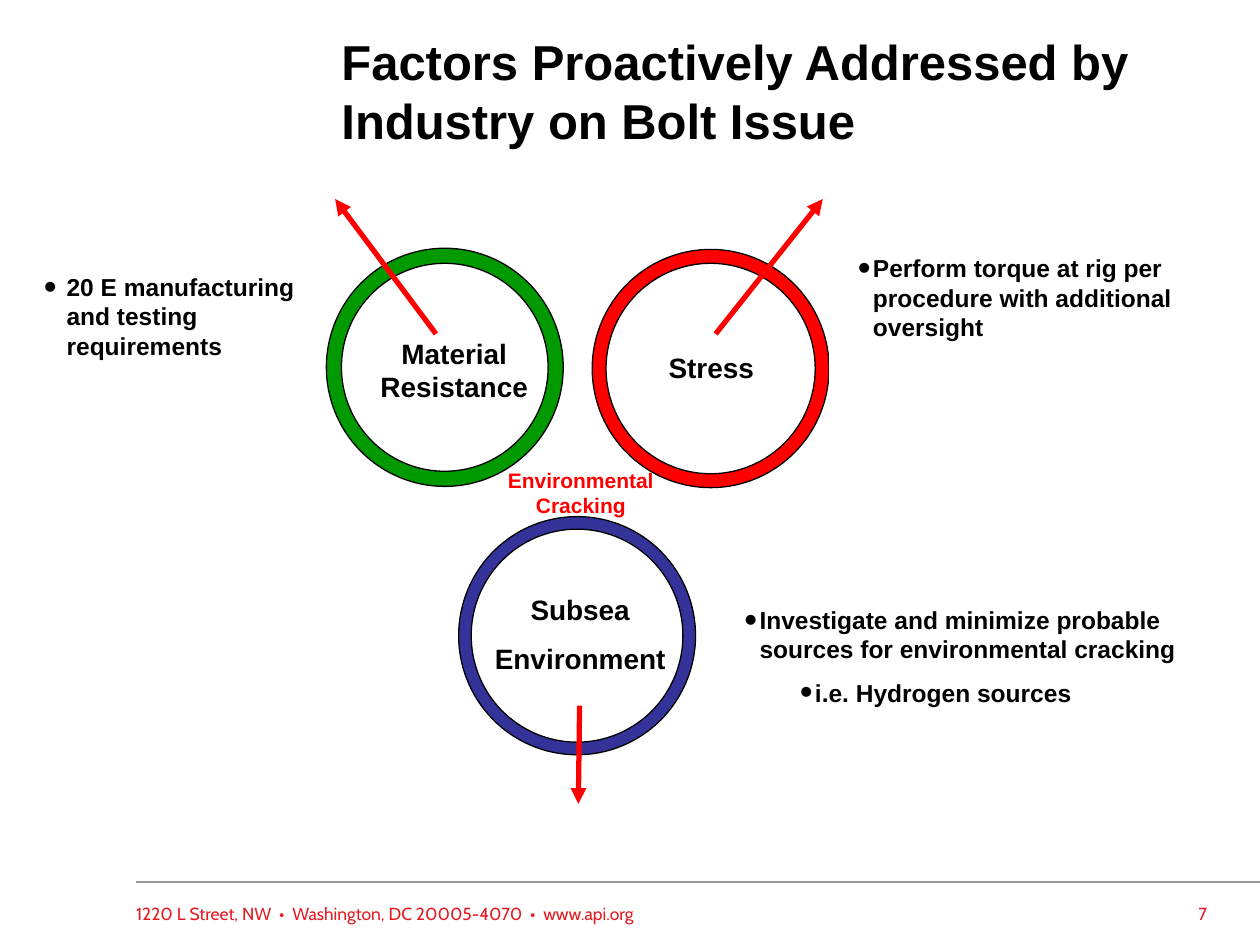
from lxml.etree import SubElement
from pptx import Presentation
from pptx.dml.color import RGBColor
from pptx.enum.shapes import MSO_CONNECTOR as Connector, MSO_SHAPE as Shape
from pptx.enum.text import MSO_ANCHOR as Anchor, MSO_AUTO_SIZE as AutoSize, PP_ALIGN as Align
from pptx.oxml.ns import qn
from pptx.util import Inches, Pt

COLORS = {
    "text": "000000",
    "paper": "FFFFFF",
    "red": "FF0000",
    "green": "009900",
    "blue": "333399",
    "rule": "969696",
    "footer": "E31B23",
}


def inches(*values):
    return [Inches(value) for value in values]


def write(paragraph, text, size=14, color="text", font="Arial", bold=True, align=Align.LEFT):
    paragraph.text = text
    paragraph.alignment = align
    paragraph.font.size = Pt(size)
    paragraph.font.name = font
    paragraph.font.bold = bold
    paragraph.font.color.rgb = RGBColor.from_string(COLORS[color])


def add_bullet(paragraph, margin, hanging):
    properties = paragraph._p.get_or_add_pPr()
    properties.set("marL", str(Inches(margin)))
    properties.set("indent", str(-Inches(hanging)))
    SubElement(properties, qn("a:buSzPct"), val="150000")
    SubElement(properties, qn("a:buFont"), typeface="Arial")
    SubElement(properties, qn("a:buChar"), char="•")


class SlideBuilder:
    def __init__(self, slide):
        self.slide = slide

    def title(self, text, box):
        shape = self.slide.shapes.title
        shape.left, shape.top, shape.width, shape.height = inches(*box)
        frame = shape.text_frame
        frame.auto_size = AutoSize.NONE
        frame.vertical_anchor = Anchor.TOP
        frame.margin_left = Inches(0.1)
        frame.margin_top = frame.margin_right = frame.margin_bottom = 0
        write(frame.paragraphs[0], text, size=28)

    def ring(self, left, top, color, thickness):
        width, height = 1.88, 1.89
        shape = self.slide.shapes.add_shape(Shape.DONUT, *inches(left, top, width, height))
        shape.adjustments[0] = thickness / width
        shape.shadow.inherit = False
        shape.fill.solid()
        shape.fill.fore_color.rgb = RGBColor.from_string(COLORS[color])
        shape.line.color.rgb = RGBColor.from_string(COLORS["text"])
        shape.line.width = Pt(0.75)

    def label(self, lines, box, margins=True, **style):
        frame = self.slide.shapes.add_textbox(*inches(*box)).text_frame
        frame.word_wrap = True
        if not margins:
            frame.margin_left = frame.margin_top = frame.margin_right = frame.margin_bottom = 0
        for index, line in enumerate(lines):
            paragraph = frame.paragraphs[0] if index == 0 else frame.add_paragraph()
            if index:
                paragraph.space_before = Pt(9)
            write(paragraph, line, **style)

    def bullets(self, items, box, hanging=0.12):
        """Add a white panel; each item is (text, left margin), one list level per item."""
        shape = self.slide.shapes.add_shape(Shape.RECTANGLE, *inches(*box))
        shape.shadow.inherit = False
        shape.fill.solid()
        shape.fill.fore_color.rgb = RGBColor.from_string(COLORS["paper"])
        shape.line.fill.background()
        frame = shape.text_frame
        frame.word_wrap = True
        frame.vertical_anchor = Anchor.TOP
        for level, (text, margin) in enumerate(items):
            paragraph = frame.paragraphs[0] if level == 0 else frame.add_paragraph()
            paragraph.level = level
            if level:
                paragraph.space_before = Pt(8)
            add_bullet(paragraph, margin, hanging)
            write(paragraph, text)

    def line(self, start, end, color, width, arrow=False):
        connector = self.slide.shapes.add_connector(Connector.STRAIGHT, *inches(*start, *end))
        connector.line.color.rgb = RGBColor.from_string(COLORS[color])
        connector.line.width = Pt(width)
        if arrow:
            SubElement(connector.line._get_or_add_ln(), qn("a:tailEnd"), type="triangle")
        SubElement(connector._element.spPr, qn("a:effectLst"))


def main():
    presentation = Presentation()
    presentation.slide_width, presentation.slide_height = inches(10, 7.5)
    builder = SlideBuilder(presentation.slides.add_slide(presentation.slide_layouts[5]))

    builder.title("Factors Proactively Addressed by Industry on Bolt Issue", (2.61, 0.25, 7.33, 0.92))
    builder.line((1.08, 7), (10, 7), "rule", 1)

    builder.ring(4.7, 1.98, "red", 0.11)
    builder.ring(2.59, 1.97, "green", 0.12)
    builder.ring(3.64, 4.1, "blue", 0.1)

    for start, end in (
        ((3.46, 2.65), (2.66, 1.58)),
        ((5.68, 2.65), (6.53, 1.58)),
        ((4.6, 5.6), (4.59, 6.38)),
    ):
        builder.line(start, end, "red", 3, arrow=True)

    for lines, box in (
        (["Stress"], (5.05, 2.73, 1.19, 0.37)),
        (["Material Resistance"], (2.88, 2.62, 1.45, 0.64)),
        (["Subsea", "Environment"], (3.73, 4.65, 1.75, 0.77)),
    ):
        builder.label(lines, box, size=16, align=Align.CENTER)
    builder.label(["Environmental Cracking"], (3.9, 3.66, 1.42, 0.5),
                  size=12, color="red", align=Align.CENTER)

    builder.bullets([("20 E manufacturing and testing requirements", 0.18)],
                    (0.25, 2.11, 2.29, 0.81), hanging=0.18)
    builder.bullets([("Perform torque at rig per procedure with additional oversight", 0.25)],
                    (6.58, 1.96, 3.17, 1.16))
    builder.bullets([("Investigate and minimize probable sources for environmental cracking", 0.25),
                     ("i.e. Hydrogen sources", 0.69)],
                    (5.68, 4.75, 4.17, 1.28))

    footer = {"margins": False, "size": 10, "color": "footer", "font": "Cabin", "bold": False}
    builder.label(["1220 L Street, NW  •  Washington, DC 20005-4070  •  www.api.org"],
                  (1.08, 7.17, 4.42, 0.52), **footer)
    builder.label(["7"], (7.25, 7.17, 2.33, 0.52), align=Align.RIGHT, **footer)

    presentation.save("out.pptx")


if __name__ == "__main__":
    main()
